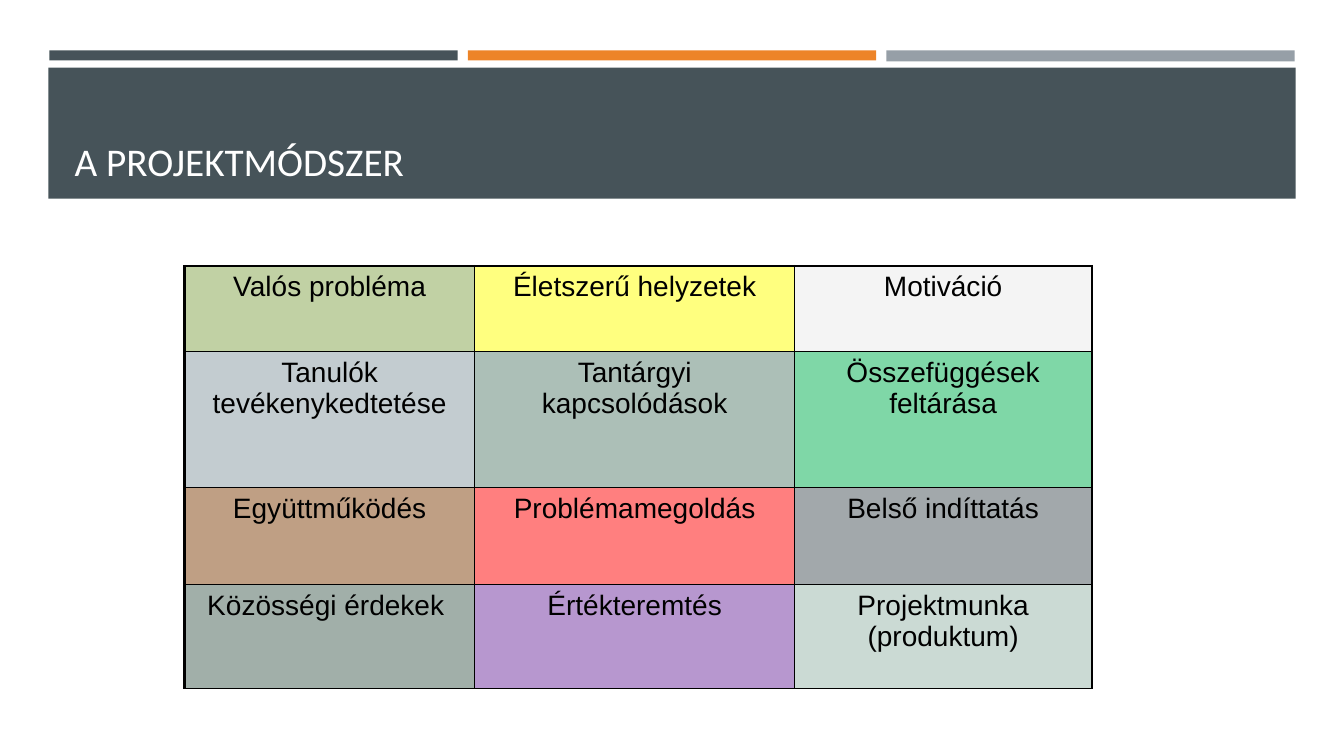
import pptx
import pptx.dml.color
import pptx.enum.shapes
import pptx.enum.text
import pptx.oxml
import pptx.oxml.ns
import pptx.util

Inches = pptx.util.Inches
Pt = pptx.util.Pt

DARK = "465359"
BLACK = "000000"
THIN, THICK = 1, 2.25

BARS = [
    (0.49, 0.5, 4.05, 0.1, DARK),
    (4.64, 0.5, 4.05, 0.1, "ED8428"),
    (8.79, 0.5, 4.05, 0.11, "969FA7"),
    (0.48, 0.67, 12.37, 1.3, DARK),
]
COLUMN_WIDTHS = [2.88, 3.17, 2.95]
ROW_HEIGHTS = [0.85, 1.35, 0.96, 1.03]
CELLS = [
    [("Valós probléma", "84A44B"), ("Életszerű helyzetek", "FFFF00"), ("Motiváció", "EBEBEB")],
    [("Tanulók tevékenykedtetése", "899AA2"), ("Tantárgyi kapcsolódások", "5A8071"),
     ("Összefüggések feltárása", "00B050")],
    [("Együttműködés", "80410B"), ("Problémamegoldás", "FF0000"), ("Belső indíttatás", DARK)],
    [("Közösségi érdekek ", "446055"), ("Értékteremtés", "7030A0"),
     ("Projektmunka (produktum)", "98B7AB")],
]


def paint(color_format, color):
    color_format.rgb = pptx.dml.color.RGBColor.from_string(color)


def add_bar(slide, left, top, width, height, color):
    bar = slide.shapes.add_shape(
        pptx.enum.shapes.MSO_SHAPE.RECTANGLE,
        Inches(left), Inches(top), Inches(width), Inches(height))
    bar.shadow.inherit = False
    bar.fill.solid()
    paint(bar.fill.fore_color, color)
    bar.line.fill.background()


def write(para, text, font, size, color, align):
    para.alignment = align
    span = para.add_run()
    span.text = text
    span.font.name = font
    span.font.size = Pt(size)
    span.font.bold = False
    paint(span.font.color, color)


def set_title(slide, text):
    title = slide.shapes.title
    title.left, title.top = Inches(0.64), Inches(0.77)
    title.width, title.height = Inches(12.06), Inches(1.11)
    frame = title.text_frame
    frame.word_wrap = True
    frame.auto_size = pptx.enum.text.MSO_AUTO_SIZE.NONE
    frame.vertical_anchor = pptx.enum.text.MSO_ANCHOR.BOTTOM
    write(frame.paragraphs[0], text, "Calibri", 28, "FFFFFF", pptx.enum.text.PP_ALIGN.LEFT)
    title.element.getparent().append(title.element)


def fill_half_transparent(cell, color):
    cell.fill.solid()
    paint(cell.fill.fore_color, color)
    properties = cell._tc.get_or_add_tcPr()
    color_node = properties.find(".//" + pptx.oxml.ns.qn("a:srgbClr"))
    color_node.append(pptx.oxml.parse_xml(
        f'<a:alpha {pptx.oxml.ns.nsdecls("a")} val="50000"/>'))


def set_borders(cell, widths):
    properties = cell._tc.get_or_add_tcPr()
    for position, (side, width) in enumerate(widths.items()):
        properties.insert(position, pptx.oxml.parse_xml(
            f'<a:ln{side} {pptx.oxml.ns.nsdecls("a")} w="{int(Pt(width))}">'
            f'<a:solidFill><a:srgbClr val="{BLACK}"/></a:solidFill></a:ln{side}>'))


def add_grid(slide):
    table = slide.shapes.add_table(
        len(ROW_HEIGHTS), len(COLUMN_WIDTHS), Inches(1.83), Inches(2.64),
        Inches(sum(COLUMN_WIDTHS)), Inches(sum(ROW_HEIGHTS))).table
    table.first_row = False
    table.horz_banding = False
    for column, width in zip(table.columns, COLUMN_WIDTHS):
        column.width = Inches(width)
    last = len(COLUMN_WIDTHS) - 1
    for r, row in enumerate(CELLS):
        table.rows[r].height = Inches(ROW_HEIGHTS[r])
        for c, (text, color) in enumerate(row):
            cell = table.cell(r, c)
            para = cell.text_frame.paragraphs[0]
            para.space_before = Pt(4)
            write(para, text, "Arial", 20, BLACK, pptx.enum.text.PP_ALIGN.CENTER)
            fill_half_transparent(cell, color)
            set_borders(cell, {
                "L": THICK if c == 0 else THIN,
                "R": THICK if c == last else THIN,
                "T": THICK if r == 0 else THIN,
                "B": THIN,
            })


def main():
    deck = pptx.Presentation()
    deck.slide_width, deck.slide_height = Inches(13.33), Inches(7.5)
    page = deck.slides.add_slide(deck.slide_layouts.get_by_name("Title Only"))
    for bar in BARS:
        add_bar(page, *bar)
    set_title(page, "A PROJEKTMÓDSZER")
    add_grid(page)
    deck.save("out.pptx")


if __name__ == "__main__":
    main()
